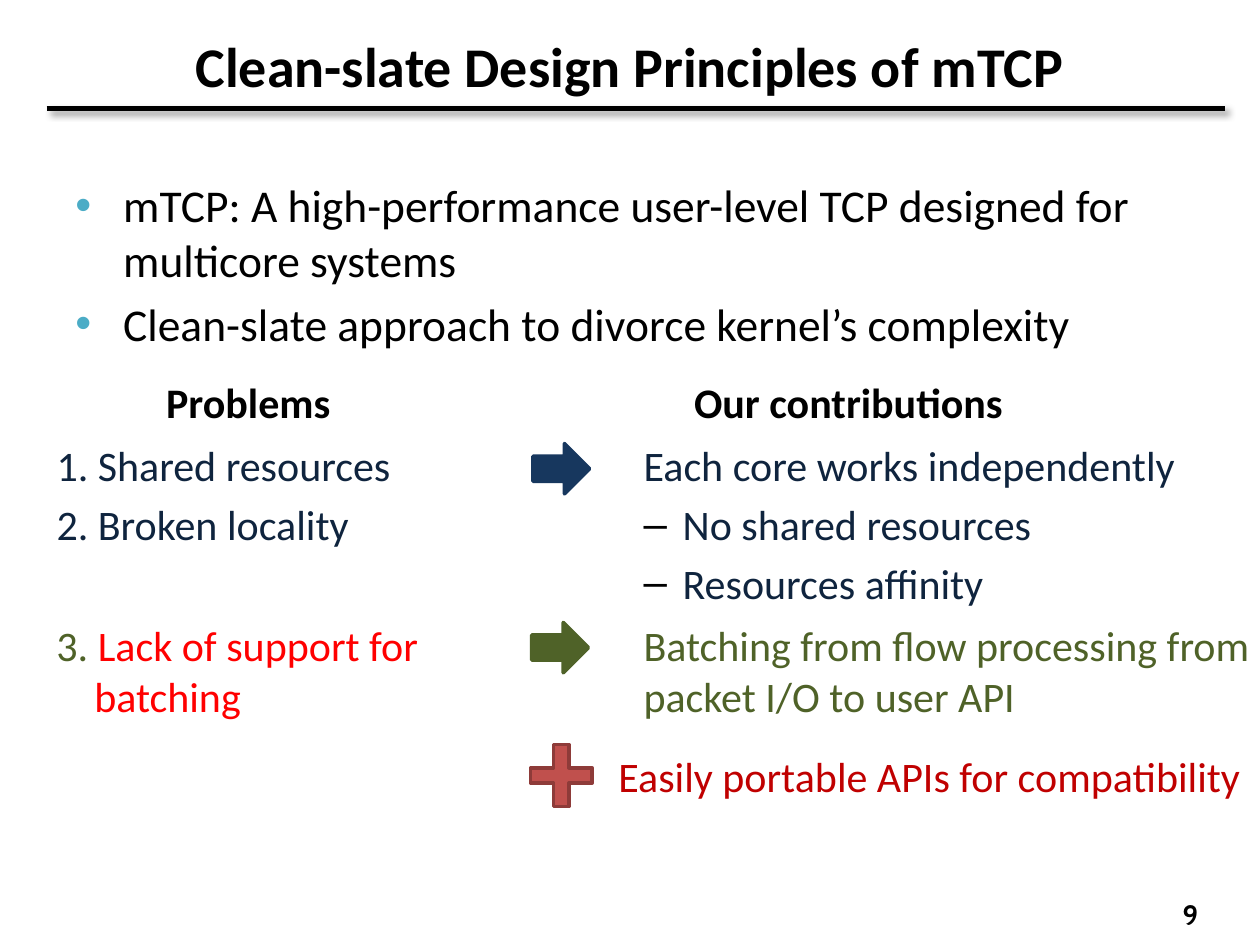
"""Build the slide on the clean-slate design principles of mTCP."""
from dataclasses import dataclass

import pptx
import pptx.dml.color
import pptx.enum.shapes
import pptx.enum.text
import pptx.oxml
import pptx.util

Inches = pptx.util.Inches
Pt = pptx.util.Pt
Align = pptx.enum.text.PP_ALIGN
Anchor = pptx.enum.text.MSO_ANCHOR
Kind = pptx.enum.shapes.MSO_SHAPE
NS = 'xmlns:a="http://schemas.openxmlformats.org/drawingml/2006/main"'


@dataclass(frozen=True)
class Theme:
    """Hold the colours, fonts and type sizes."""
    font: str = "Calibri"
    number_font: str = "Cabin"
    title: int = 32
    body: int = 26
    detail: int = 24
    number: int = 16
    black: str = "000000"
    navy: str = "0F243E"
    blue: str = "17375E"
    green: str = "4F6228"
    alert: str = "FF0000"
    red: str = "C00000"
    plus: str = "C0504D"
    plus_edge: str = "8E3B39"
    bullet: str = "4BACC6"


THEME = Theme()

TITLE = "Clean-slate Design Principles of mTCP"
PAGE_NUMBER = "9"
INTRO = [
    "mTCP: A high-performance user-level TCP designed for multicore systems",
    "Clean-slate approach to divorce kernel’s complexity",
]
HEADINGS = [("Problems", 1.22, 1.52), ("Our contributions", 5.41, 2.68)]

PLAIN = {"left": 0.5}
DASHED = {"left": 0.81, "hang": 0.31, "bullet": "–", "bullet_color": THEME.black}
NUMBERED = {"left": 0.8, "hang": 0.3}
DOTTED = {"left": 0.38, "hang": 0.38, "bullet": "•", "bullet_color": THEME.bullet}

BLOCKS = [
    ((4.51, 3.44, 6.45, 1.18), [
        (PLAIN, [("Each core works independently", THEME.navy)]),
        (DASHED, [("No shared resources", THEME.navy)]),
        (DASHED, [("Resources affinity", THEME.navy)]),
    ]),
    ((-0.15, 3.44, 4.08, 1.18), [
        (PLAIN, [("1. Shared resources", THEME.navy)]),
        (PLAIN, [("2. Broken locality", THEME.navy)]),
    ]),
    ((4.51, 4.87, 5.64, 1.18), [
        (PLAIN, [("Batching from flow processing from packet I/O to user API", THEME.green)]),
    ]),
    ((-0.15, 4.87, 5.03, 1.18), [
        (NUMBERED, [("3. ", THEME.green), ("Lack of support for \nbatching", THEME.alert)]),
    ]),
    ((4.31, 5.91, 5.64, 0.79), [
        (PLAIN, [("Easily portable APIs for compatibility", THEME.red)]),
    ]),
]
MARKERS = [
    (Kind.RIGHT_ARROW, (4.23, 3.52, 0.45, 0.4), THEME.blue, THEME.blue, None),
    (Kind.RIGHT_ARROW, (4.22, 4.94, 0.45, 0.4), THEME.green, THEME.green, None),
    (Kind.CROSS, (4.21, 5.91, 0.49, 0.49), THEME.plus, THEME.plus_edge, 0.376),
]


def rgb(value):
    """Turn a hex string into a colour."""
    return pptx.dml.color.RGBColor.from_string(value)


def add_box(page, place, anchor=Anchor.TOP, wrap=True):
    """Add a text box and return its text frame."""
    frame = page.shapes.add_textbox(*map(Inches, place)).text_frame
    frame.word_wrap = wrap
    frame.vertical_anchor = anchor
    return frame


def add_span(para, text, size, color=THEME.black, bold=False, font=THEME.font):
    """Add styled runs, with a line break at each newline."""
    for index, line in enumerate(text.split("\n")):
        if index:
            para.add_line_break()
        span = para.add_run()
        span.text = line
        span.font.name = font
        span.font.size = Pt(size)
        span.font.bold = bold
        span.font.color.rgb = rgb(color)


def set_indent(para, left, hang=0, bullet=None, bullet_color=None):
    """Set the indents and the bullet of a paragraph."""
    props = para._p.get_or_add_pPr()
    props.set("marL", str(Inches(left)))
    props.set("indent", str(-Inches(hang)))
    if bullet:
        for xml in (
            f'<a:buClr {NS}><a:srgbClr val="{bullet_color}"/></a:buClr>',
            f'<a:buFont {NS} typeface="Arial"/>',
            f'<a:buChar {NS} char="{bullet}"/>',
        ):
            props.append(pptx.oxml.parse_xml(xml))


def add_list(page, place, items, size):
    """Add a text box of indented paragraphs."""
    frame = add_box(page, place)
    for index, (style, spans) in enumerate(items):
        para = frame.add_paragraph() if index else frame.paragraphs[0]
        para.space_before = Pt(round(size * 0.2, 1))
        set_indent(para, **style)
        for text, color in spans:
            add_span(para, text, size, color)


def add_label(page, place, text, size, align, anchor=Anchor.TOP, wrap=True, font=THEME.font):
    """Add a single bold line of text."""
    para = add_box(page, place, anchor, wrap).paragraphs[0]
    para.alignment = align
    add_span(para, text, size, bold=True, font=font)


def add_rule(page):
    """Add the shadowed line below the title."""
    rule = page.shapes.add_connector(
        pptx.enum.shapes.MSO_CONNECTOR.STRAIGHT, *map(Inches, (0.37, 0.86, 9.72, 0.86)))
    rule.line.width = Pt(3)
    rule.line.color.rgb = rgb(THEME.black)
    rule._element.spPr.append(pptx.oxml.parse_xml(
        f'<a:effectLst {NS}><a:outerShdw blurRad="{Pt(4)}" dist="{Pt(3)}" dir="2700000">'
        f'<a:srgbClr val="{THEME.black}"><a:alpha val="40000"/></a:srgbClr>'
        '</a:outerShdw></a:effectLst>'))


def add_marker(page, kind, place, fill, edge, adjustment):
    """Add an arrow or plus sign."""
    marker = page.shapes.add_shape(kind, *map(Inches, place))
    marker.shadow.inherit = False
    marker.fill.solid()
    marker.fill.fore_color.rgb = rgb(fill)
    marker.line.color.rgb = rgb(edge)
    marker.line.width = Pt(2)
    if adjustment is not None:
        marker.adjustments[0] = adjustment


def main():
    """Build and save the deck."""
    deck = pptx.Presentation()
    deck.slide_width, deck.slide_height = Inches(10), Inches(7.5)
    page = deck.slides.add_slide(deck.slide_layouts[6])
    add_rule(page)
    add_label(page, (0.28, 0.17, 9.44, 0.69), TITLE, THEME.title, Align.CENTER, Anchor.MIDDLE)
    add_label(page, (7.28, 7.06, 2.33, 0.4), PAGE_NUMBER, THEME.number, Align.RIGHT,
              Anchor.MIDDLE, font=THEME.number_font)
    intro = [(DOTTED, [(text, THEME.black)]) for text in INTRO]
    add_list(page, (0.5, 1.36, 9.5, 5.54), intro, THEME.body)
    for text, left, width in HEADINGS:
        add_label(page, (left, 2.94, width, 0.5), text, THEME.detail, Align.LEFT, wrap=False)
    for place, items in BLOCKS:
        add_list(page, place, items, THEME.detail)
    for marker in MARKERS:
        add_marker(page, *marker)
    deck.save("out.pptx")


if __name__ == "__main__":
    main()
